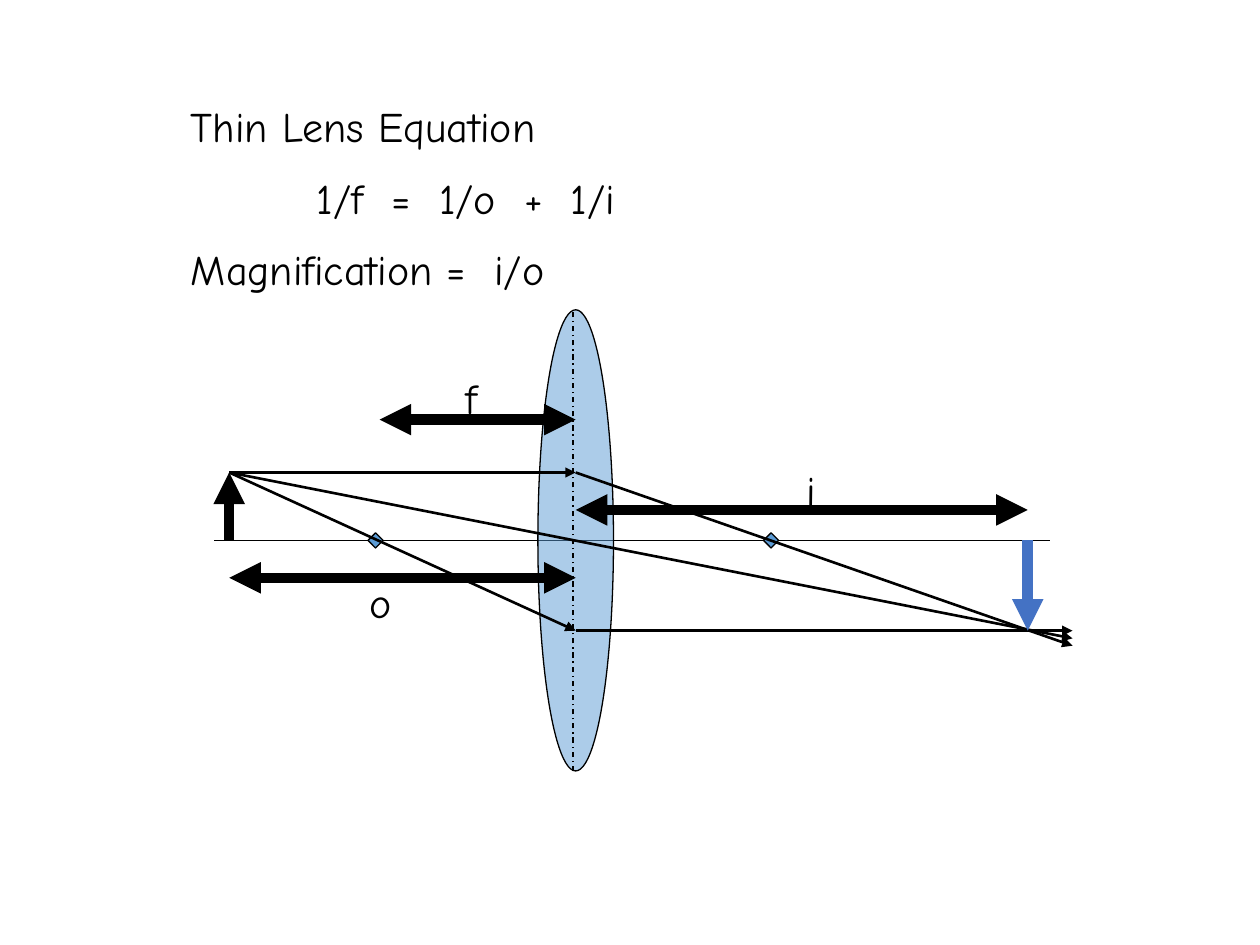
from dataclasses import dataclass

from lxml.etree import SubElement
from pptx import Presentation
from pptx.dml.color import RGBColor
from pptx.enum.dml import MSO_LINE_DASH_STYLE as Dash
from pptx.enum.shapes import MSO_CONNECTOR as Connector, MSO_SHAPE as Shape
from pptx.enum.text import MSO_AUTO_SIZE as AutoSize
from pptx.oxml.ns import qn
from pptx.util import Pt


@dataclass(frozen=True)
class Theme:
    """Colours, type and line weights of the diagram."""
    ink: RGBColor = RGBColor(0x00, 0x00, 0x00)
    glass: RGBColor = RGBColor(0x5B, 0x9B, 0xD5)
    image: RGBColor = RGBColor(0x44, 0x72, 0xC4)
    font: str = "Comic Neue"
    text_size: float = 24
    para_gap: float = 12
    tab_stop: float = 72
    thin: float = 0.75
    ray: float = 1.5
    thick: float = 6


class LensDiagram:
    """Draws the elements of an optics diagram on one slide, in points."""

    def __init__(self, page, theme):
        self.page = page
        self.theme = theme

    def line(self, start, end, width, color=None, head=False, tail=False, dash=None):
        line = self.page.shapes.add_connector(
            Connector.STRAIGHT, *(Pt(value) for value in (*start, *end)))
        line.line.color.rgb = color or self.theme.ink
        line.line.width = Pt(width)
        if dash:
            line.line.dash_style = dash
        properties = line._element.spPr
        for tag, wanted in (("a:headEnd", head), ("a:tailEnd", tail)):
            if wanted:
                SubElement(properties.find(qn("a:ln")), qn(tag), type="triangle")
        SubElement(properties, qn("a:effectLst"))

    def ray(self, start, end):
        self.line(start, end, self.theme.ray, tail=True)

    def span_arrow(self, left, right, y):
        self.line((left, y), (right, y), self.theme.thick, head=True, tail=True)

    def solid(self, kind, center, width, height, opacity=100):
        x, y = center
        solid = self.page.shapes.add_shape(
            kind, Pt(x - width / 2), Pt(y - height / 2), Pt(width), Pt(height))
        solid.shadow.inherit = False
        solid.fill.solid()
        solid.fill.fore_color.rgb = self.theme.glass
        solid.line.color.rgb = self.theme.ink
        solid.line.width = Pt(self.theme.thin)
        if opacity < 100:
            color = solid._element.spPr.find(qn("a:solidFill"))[0]
            SubElement(color, qn("a:alpha"), val=str(opacity * 1000))

    def text(self, left, top, width, height, lines, wrap=False):
        box = self.page.shapes.add_textbox(Pt(left), Pt(top), Pt(width), Pt(height))
        frame = box.text_frame
        frame.word_wrap = wrap
        frame.auto_size = AutoSize.SHAPE_TO_FIT_TEXT
        for index, words in enumerate(lines):
            para = frame.add_paragraph() if index else frame.paragraphs[0]
            if index:
                para.space_before = Pt(self.theme.para_gap)
            if words.startswith("\t"):
                stops = SubElement(para._p.get_or_add_pPr(), qn("a:tabLst"))
                SubElement(stops, qn("a:tab"), pos=str(Pt(self.theme.tab_stop)), algn="l")
            span = para.add_run()
            span.text = words
            span.font.name = self.theme.font
            span.font.size = Pt(self.theme.text_size)
            span.font.color.rgb = self.theme.ink


def main():
    deck = Presentation()
    deck.slide_width, deck.slide_height = Pt(720), Pt(540)
    theme = Theme()
    diagram = LensDiagram(deck.slides.add_slide(deck.slide_layouts[6]), theme)

    axis_y, lens_x, object_x, image_x, ray_end = 308.8, 329, 131, 587.3, 612.9
    object_y, image_y = 270, 360.4
    object_tip = (object_x, object_y)
    upper_bend, lower_bend = (lens_x, object_y), (lens_x, image_y)

    diagram.line((122.4, axis_y), (600.2, axis_y), theme.thin)
    diagram.solid(Shape.OVAL, (lens_x, axis_y), 43.2, 263.5, opacity=50)
    diagram.ray(object_tip, (ray_end, 364.8))
    for focus_x in (440.6, 214.6):
        diagram.solid(Shape.DIAMOND, (focus_x, axis_y), 8.64, 8.64)

    diagram.line((object_x, axis_y), object_tip, theme.thick, tail=True)
    diagram.ray(object_tip, upper_bend)
    diagram.ray(upper_bend, (ray_end, 369))
    diagram.ray(object_tip, lower_bend)
    diagram.ray(lower_bend, (ray_end, image_y))
    diagram.line((image_x, axis_y), (image_x, image_y), theme.thick,
                 color=theme.image, tail=True)

    for left, right, y in ((216.9, lens_x, 239.8), (lens_x, image_x, 291.4),
                           (object_x, lens_x, 330.2)):
        diagram.span_arrow(left, right, y)
    for letter, left, top, width in (("f", 259.2, 209.5, 19.4),
                                     ("o", 203.8, 326, 19.4),
                                     ("i", 453.6, 262, 15.1)):
        diagram.text(left, top, width, 29.5, [letter])

    diagram.text(102, 54, 516.2, 221, [
        "Thin Lens Equation",
        "\t1/f  =  1/o  +  1/i",
        "Magnification =  i/o",
    ], wrap=True)
    diagram.line((327.4, 440.6), (327.4, 176.4), theme.thin, dash=Dash.DASH_DOT)

    deck.save("out.pptx")


if __name__ == "__main__":
    main()
